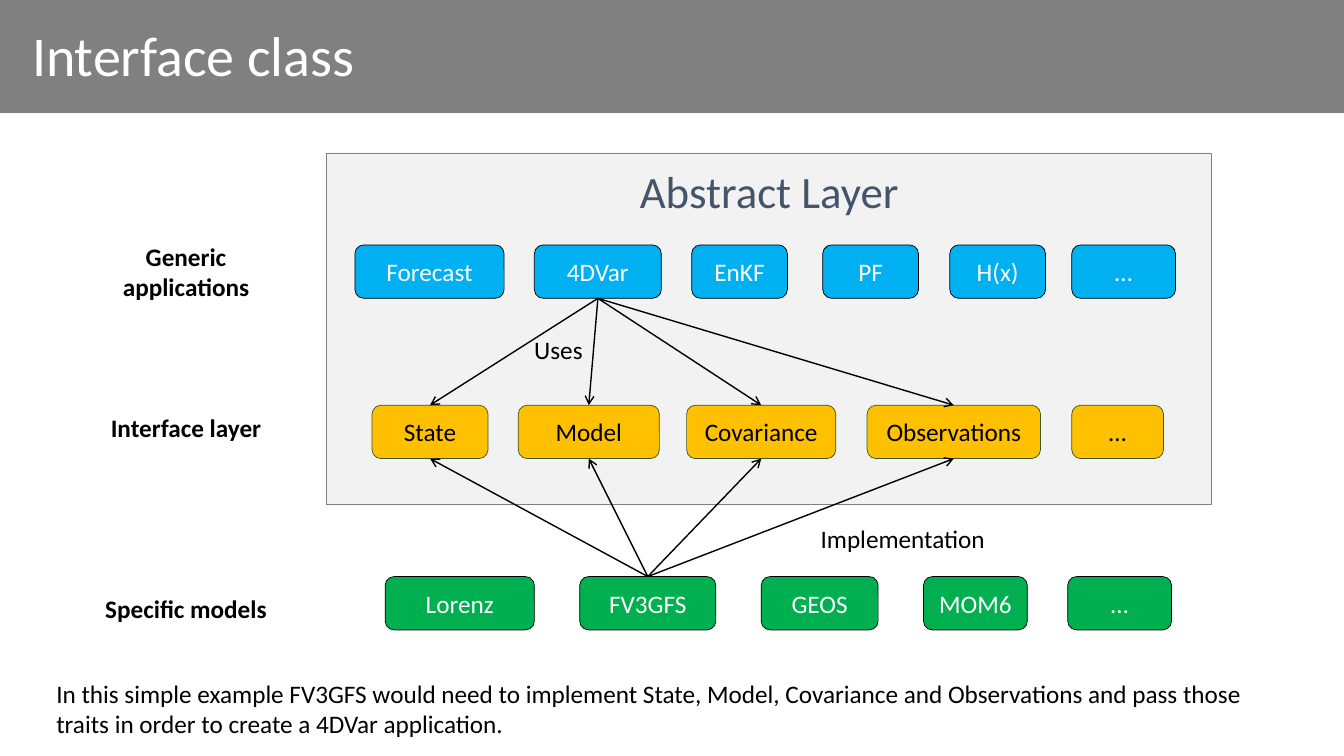
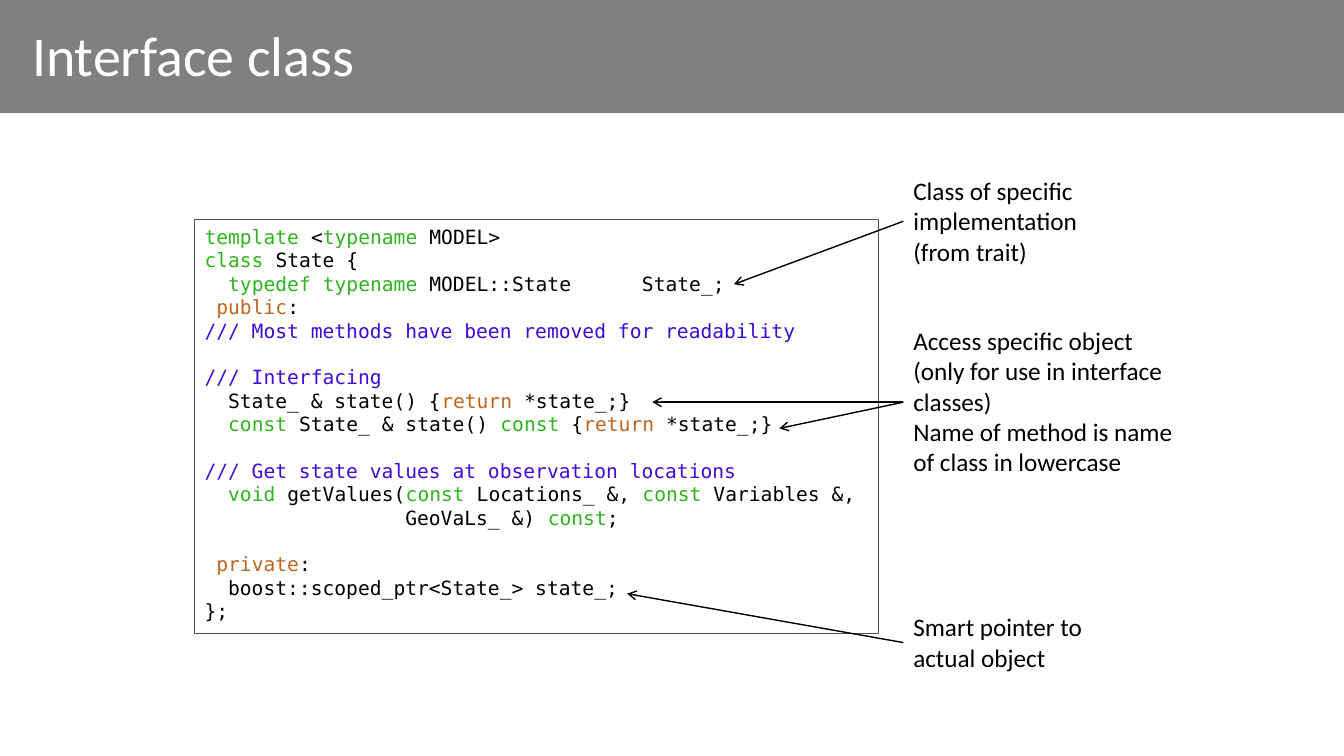
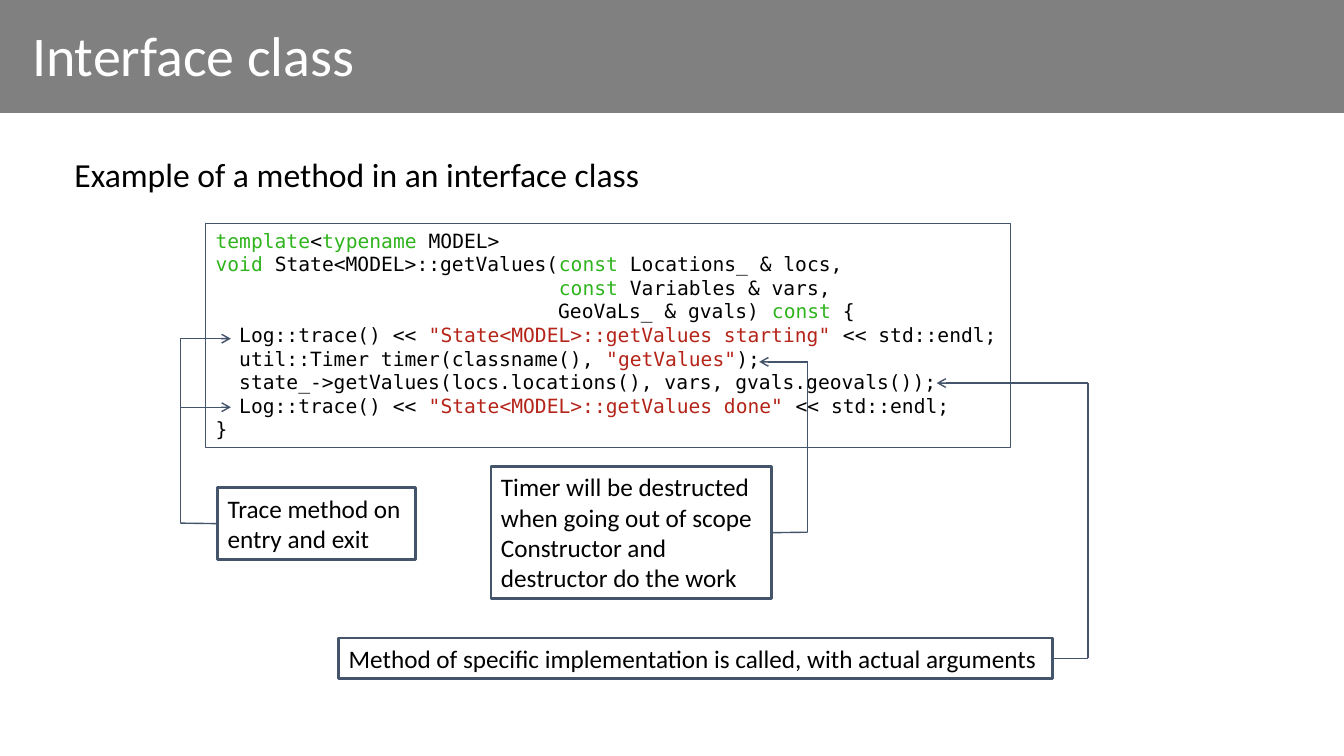
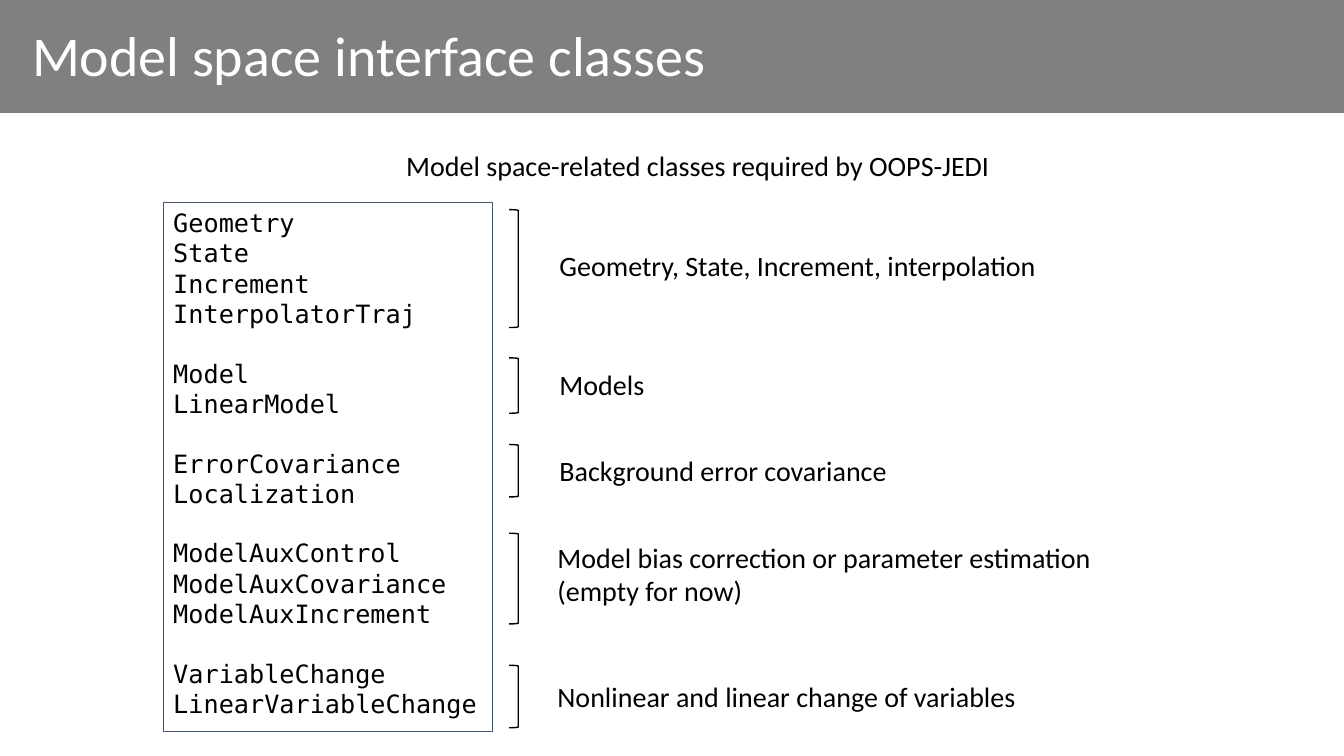
"""Build four slides that explain interface classes."""
from itertools import groupby

from pptx import Presentation
from pptx.dml.color import RGBColor
from pptx.enum import shapes, text
from pptx.oxml.ns import qn
from pptx.util import Inches, Pt

BLACK = RGBColor(0x00, 0x00, 0x00)
WHITE = RGBColor(0xFF, 0xFF, 0xFF)
GREY = RGBColor(0x80, 0x80, 0x80)
PALE = RGBColor(0xF2, 0xF2, 0xF2)
SLATE = RGBColor(0x44, 0x54, 0x6A)
BLUE = RGBColor(0x00, 0xB0, 0xF0)
AMBER = RGBColor(0xFF, 0xC0, 0x00)
GREEN = RGBColor(0x00, 0xB0, 0x50)
MOSS = RGBColor(0x38, 0x57, 0x23)
CODE_TYPE = RGBColor(0x2F, 0xB4, 0x1D)
CODE_FLOW = RGBColor(0xC1, 0x65, 0x1C)
CODE_COMMENT = RGBColor(0x40, 0x0B, 0xD9)
CODE_STRING = RGBColor(0xB4, 0x24, 0x19)

SANS = "Calibri"
MONO = "DejaVu Sans Mono"
MONO_LINE = 1.164
SLIDE_W = 13.33
NODE_H = 0.53
TOP, LEFT, BOTTOM, RIGHT = range(4)

KEYWORDS = dict.fromkeys(
    ("template", "typename", "class", "typedef", "void", "const"), CODE_TYPE)
KEYWORDS.update(dict.fromkeys(("public", "private", "return"), CODE_FLOW))

STATE_CLASS = """template <typename MODEL>
class State {
  typedef typename MODEL::State      State_;
 public:
/// Most methods have been removed for readability

/// Interfacing
  State_ & state() {return *state_;}
  const State_ & state() const {return *state_;}

/// Get state values at observation locations
  void getValues(const Locations_ &, const Variables &,
                 GeoVaLs_ &) const;

 private:
  boost::scoped_ptr<State_> state_;
};"""

GET_VALUES = """template<typename MODEL>
void State<MODEL>::getValues(const Locations_ & locs,
                             const Variables & vars,
                             GeoVaLs_ & gvals) const {
  Log::trace() << "State<MODEL>::getValues starting" << std::endl;
  util::Timer timer(classname(), "getValues");
  state_->getValues(locs.locations(), vars, gvals.geovals());
  Log::trace() << "State<MODEL>::getValues done" << std::endl;
}"""

CLASS_NAMES = """Geometry
State
Increment
InterpolatorTraj

Model
LinearModel

ErrorCovariance
Localization

ModelAuxControl
ModelAuxCovariance
ModelAuxIncrement

VariableChange
LinearVariableChange"""


def style(font, size, color, name=SANS, bold=False):
    font.name, font.size, font.bold = name, Pt(size), bold
    font.color.rgb = color


def outline(shape, color, width):
    shape.line.color.rgb = color
    shape.line.width = Pt(width)


def add_text(s, at, words, size=18, color=BLACK, center=False, bold=False, wrap=False):
    box = s.shapes.add_textbox(*map(Inches, at))
    tf = box.text_frame
    tf.word_wrap = wrap
    tf.auto_size = text.MSO_AUTO_SIZE.SHAPE_TO_FIT_TEXT
    tf.text = words
    for p in tf.paragraphs:
        if center:
            p.alignment = text.PP_ALIGN.CENTER
        for r in p.runs:
            style(r.font, size, color, bold=bold)
    return box


def add_preset(s, kind, at, fill, line, width):
    shape = s.shapes.add_shape(kind, *map(Inches, at))
    shape.shadow.inherit = False
    if fill is None:
        shape.fill.background()
    else:
        shape.fill.solid()
        shape.fill.fore_color.rgb = fill
    if line is None:
        shape.line.fill.background()
    else:
        outline(shape, line, width)
    return shape


def add_node(s, at, words, fill, line, color):
    node = add_preset(s, shapes.MSO_SHAPE.ROUNDED_RECTANGLE, at, fill, line, 0.5)
    tf = node.text_frame
    tf.text = words
    tf.vertical_anchor = text.MSO_ANCHOR.MIDDLE
    p = tf.paragraphs[0]
    p.alignment = text.PP_ALIGN.CENTER
    style(p.runs[0].font, 18, color)
    return node


def add_line(s, start, end, color=BLACK, arrow=True):
    """Join two ends, each an (x, y) point or a (shape, site) pair."""
    joined = [hasattr(place[0], "shape_id") for place in (start, end)]
    points = [(0, 0) if j else place for j, place in zip(joined, (start, end))]
    c = s.shapes.add_connector(
        shapes.MSO_CONNECTOR.STRAIGHT, *(Inches(v) for point in points for v in point))
    if joined[0]:
        c.begin_connect(*start)
    if joined[1]:
        c.end_connect(*end)
    outline(c, color, 1)
    sp = c._element.spPr
    if arrow:
        ln = sp.find(qn("a:ln"))
        ln.append(ln.makeelement(qn("a:tailEnd"), {"type": "arrow"}))
    sp.append(sp.makeelement(qn("a:effectLst"), {}))


def code_tokens(line):
    """Yield each piece of a code line with its colour."""
    if line.startswith("///"):
        yield line, CODE_COMMENT
        return
    for i, part in enumerate(line.split('"')):
        if i % 2:
            yield f'"{part}"', CODE_STRING
            continue
        for _, chars in groupby(part, lambda ch: ch.isalnum() or ch == "_"):
            word = "".join(chars)
            yield word, KEYWORDS.get(word, BLACK)


def add_code(s, at, source, size=14):
    box = s.shapes.add_textbox(*map(Inches, at))
    outline(box, SLATE, 0.75)
    tf = box.text_frame
    tf.word_wrap = True
    for i, block in enumerate(source.split("\n\n")):
        for j, line in enumerate(block.split("\n")):
            p = tf.add_paragraph() if i or j else tf.paragraphs[0]
            if i and not j:
                p.space_before = Pt(round(size * MONO_LINE, 1))
            for color, tokens in groupby(code_tokens(line), lambda token: token[1]):
                r = p.add_run()
                r.text = "".join(word for word, _ in tokens)
                style(r.font, size, color, MONO)


def add_callout(s, at, words, corner, targets, site, wrap=False):
    box = add_text(s, at, words, wrap=wrap)
    outline(box, SLATE, 2)
    corner_x, corner_y = corner
    add_line(s, (box, site), corner, SLATE, arrow=False)
    add_line(s, corner, (corner_x, targets[0][1]), SLATE, arrow=False)
    for target in targets:
        add_line(s, (corner_x, target[1]), target, SLATE)


def new_slide(prs, title):
    s = prs.slides.add_slide(prs.slide_layouts[6])
    add_preset(s, shapes.MSO_SHAPE.RECTANGLE, (0, 0, SLIDE_W, 1.12), GREY, None, 0)
    box = add_text(s, (0.22, 0.12, 10.66, 0.91), title, 40, WHITE, wrap=True)
    tf = box.text_frame
    tf.auto_size = text.MSO_AUTO_SIZE.NONE
    tf.vertical_anchor = text.MSO_ANCHOR.MIDDLE
    tf.paragraphs[0].line_spacing = 0.9
    return s


def layers_slide(prs):
    s = new_slide(prs, "Interface class")
    add_preset(s, shapes.MSO_SHAPE.RECTANGLE, (3.24, 1.52, 8.77, 3.48), PALE, GREY, 0.5)
    add_text(s, (5.43, 1.58, 4.4, 0.64), "Abstract Layer", 32, SLATE, center=True, wrap=True)
    for y, h, label in ((2.34, 0.71, "Generic\napplications"),
                        (4.04, 0.4, "Interface layer"),
                        (5.84, 0.4, "Specific models")):
        add_text(s, (0.94, y, 1.81, h), label, center=True, bold=True, wrap=True)

    rows = (
        (2.43, BLUE, BLACK, WHITE,
         (("Forecast", 3.52, 1.48), ("4DVar", 5.3, 1.26), ("EnKF", 6.86, 0.95),
          ("PF", 8.16, 0.95), ("H(x)", 9.42, 0.95), ("…", 10.63, 1.03))),
        (4.02, AMBER, MOSS, BLACK,
         (("State", 3.69, 1.15), ("Model", 5.14, 1.4), ("Covariance", 6.81, 1.48),
          ("Observations", 8.6, 1.72), ("…", 10.63, 0.91))),
        (5.72, GREEN, BLACK, WHITE,
         (("Lorenz", 3.82, 1.48), ("FV3GFS", 5.75, 1.35), ("GEOS", 7.55, 1.16),
          ("MOM6", 9.16, 1.03), ("…", 10.59, 1.03))),
    )
    nodes = {}
    for y, fill, line, color, items in rows:
        for name, x, w in items:
            nodes[name] = add_node(s, (x, y, w, NODE_H), name, fill, line, color)
    for name in ("State", "Model", "Covariance", "Observations"):
        add_line(s, (nodes["4DVar"], BOTTOM), (nodes[name], TOP))
        add_line(s, (nodes["FV3GFS"], TOP), (nodes[name], BOTTOM))

    add_text(s, (5.2, 3.27, 0.69, 0.4), "Uses")
    add_text(s, (8.04, 5.14, 1.85, 0.4), "Implementation")
    add_text(s, (0.46, 6.68, 12.51, 0.71),
             "In this simple example FV3GFS would need to implement State, Model, "
             "Covariance and Observations and pass those traits in order to create "
             "a 4DVar application.", wrap=True)


def class_slide(prs):
    s = new_slide(prs, "Interface class")
    add_code(s, (1.93, 2.18, 6.78, 4.11), STATE_CLASS)
    notes = (
        (1.69, 1.86, 1.01, "Class of specific\nimplementation\n(from trait)",
         ((7.28, 2.82),)),
        (3.18, 2.8, 1.62, "Access specific object\n(only for use in interface\nclasses)\n"
         "Name of method is name\nof class in lowercase", ((6.47, 3.99), (7.73, 4.25))),
        (6.02, 1.9, 0.71, "Smart pointer to\nactual object", ((6.22, 5.89),)),
    )
    for y, w, h, words, targets in notes:
        box = add_text(s, (8.96, y, w, h), words)
        for target in targets:
            add_line(s, (box, LEFT), target)


def method_slide(prs):
    s = new_slide(prs, "Interface class")
    add_text(s, (0.64, 1.48, 5.86, 0.5), "Example of a method in an interface class", 24)
    add_code(s, (2.04, 2.22, 7.98, 2.22), GET_VALUES)
    add_callout(s, (2.16, 4.84, 1.96, 0.71), "Trace method on\nentry and exit",
                (1.79, 5.19), ((2.29, 3.36), (2.29, 4.04)), LEFT)
    add_callout(s, (4.87, 4.63, 2.78, 1.31),
                "Timer will be destructed\nwhen going out of scope\n"
                "Constructor and\ndestructor do the work",
                (8.01, 5.28), ((7.53, 3.59),), RIGHT)
    add_callout(s, (3.36, 6.33, 7.08, 0.4),
                "Method of specific implementation is called, with actual arguments",
                (10.79, 6.53), ((9.29, 3.8),), RIGHT, wrap=True)


def model_space_slide(prs):
    s = new_slide(prs, "Model space interface classes")
    add_text(s, (3.93, 1.42, 6.04, 0.44),
             "Model space-related classes required by OOPS-JEDI", 20)
    add_code(s, (1.62, 2.01, 3.27, 5.25), CLASS_NAMES, 18)
    groups = (
        (2.08, 1.17, (5.45, 2.42, 4.98, 0.44), "Geometry, State, Increment, interpolation"),
        (3.55, 0.55, (5.45, 3.6, 1.05, 0.44), "Models"),
        (4.41, 0.52, (5.45, 4.45, 3.48, 0.44), "Background error covariance"),
        (5.29, 0.9, (5.43, 5.31, 5.55, 0.77),
         "Model bias correction or parameter estimation\n(empty for now)"),
        (6.6, 0.62, (5.43, 6.69, 4.82, 0.44), "Nonlinear and linear change of variables"),
    )
    for y, h, at, words in groups:
        add_preset(s, shapes.MSO_SHAPE.RIGHT_BRACKET, (5.05, y, 0.09, h), None, BLACK, 1)
        add_text(s, at, words, 20)


def main():
    prs = Presentation()
    prs.slide_width, prs.slide_height = Inches(SLIDE_W), Inches(7.5)
    layers_slide(prs)
    class_slide(prs)
    method_slide(prs)
    model_space_slide(prs)
    prs.save("out.pptx")


if __name__ == "__main__":
    main()
